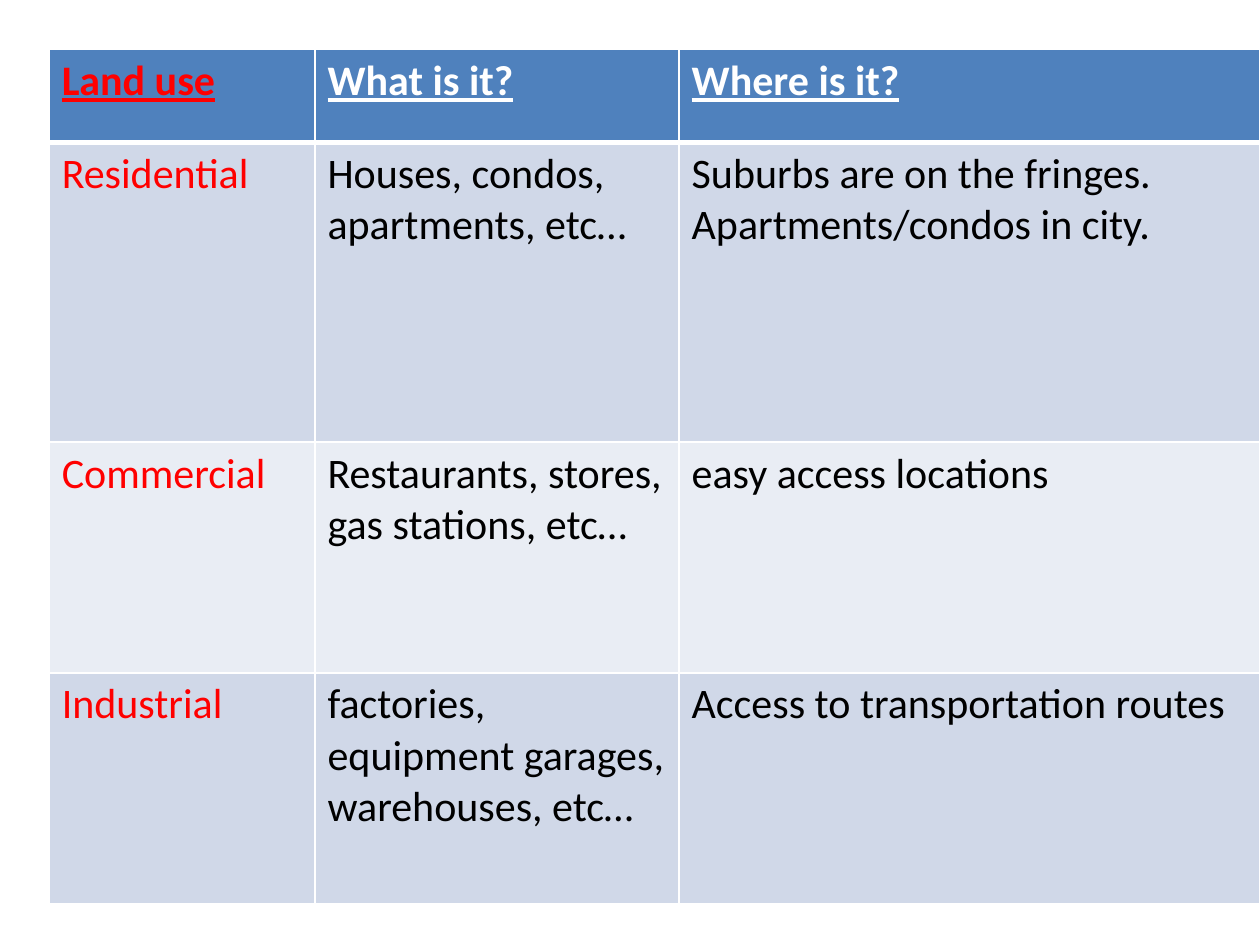
from lxml import etree
from pptx import Presentation
from pptx import util as u
from pptx.dml.color import RGBColor
from pptx.oxml import ns

HEADER_FILL = "4F81BD"
BAND_FILLS = ("D0D8E8", "E9EDF4")
WHITE, BLACK, RED = "FFFFFF", "000000", "FF0000"

COLUMN_WIDTHS = (2.11, 2.89, 4.61)
ROW_HEIGHTS = (0.74, 2.38, 1.83, 1.83)
LAND_USES = (
    ("Land use", "What is it?", "Where is it?"),
    ("Residential", "Houses, condos, apartments, etc…",
     "Suburbs are on the fringes. Apartments/condos in city."),
    ("Commercial", "Restaurants, stores, gas stations, etc…",
     "easy access locations"),
    ("Industrial", "factories, equipment garages, warehouses, etc…",
     "Access to transportation routes"),
)


def color(value):
    return RGBColor.from_string(value)


class SlideBuilder:
    font_name = "Calibri"
    font_size = 24

    def __init__(self, slide):
        self.slide = slide

    def table(self, left, top, rows, widths, heights):
        shape = self.slide.shapes.add_table(
            len(rows), len(widths), u.Inches(left), u.Inches(top),
            u.Inches(sum(widths)), u.Inches(sum(heights)))
        table = shape.table
        for column, width in zip(table.columns, widths):
            column.width = u.Inches(width)
        for row, height in zip(table.rows, heights):
            row.height = u.Inches(height)
        for row_index, texts in enumerate(rows):
            for column_index, words in enumerate(texts):
                self.cell(table.cell(row_index, column_index), words,
                          row_index, column_index)

    def cell(self, cell, words, row_index, column_index):
        is_header = row_index == 0
        cell.text_frame.text = words
        font = cell.text_frame.paragraphs[0].runs[0].font
        font.name = self.font_name
        font.size = u.Pt(self.font_size)
        font.bold = font.underline = is_header
        body_color = WHITE if is_header else BLACK
        font.color.rgb = color(RED if column_index == 0 else body_color)

        cell.fill.solid()
        band_fill = BAND_FILLS[(row_index - 1) % 2]
        cell.fill.fore_color.rgb = color(HEADER_FILL if is_header else band_fill)

        # A thick line separates the header from the body
        self.borders(cell, top=3 if row_index == 1 else 1,
                     bottom=3 if is_header else 1)

    def borders(self, cell, top, bottom):
        properties = cell._tc.get_or_add_tcPr()
        sides = (("lnL", 1), ("lnR", 1), ("lnT", top), ("lnB", bottom))
        for position, (side, width) in enumerate(sides):
            line = etree.Element(ns.qn(f"a:{side}"), w=str(u.Pt(width)))
            fill = etree.SubElement(line, ns.qn("a:solidFill"))
            etree.SubElement(fill, ns.qn("a:srgbClr"), val=WHITE)
            properties.insert(position, line)


def main():
    presentation = Presentation()
    presentation.slide_width = u.Inches(10)
    presentation.slide_height = u.Inches(7.5)
    slide = presentation.slides.add_slide(presentation.slide_layouts[6])

    # Land use table
    builder = SlideBuilder(slide)
    builder.table(0.39, 0.39, LAND_USES, COLUMN_WIDTHS, ROW_HEIGHTS)

    presentation.save("out.pptx")


if __name__ == "__main__":
    main()
